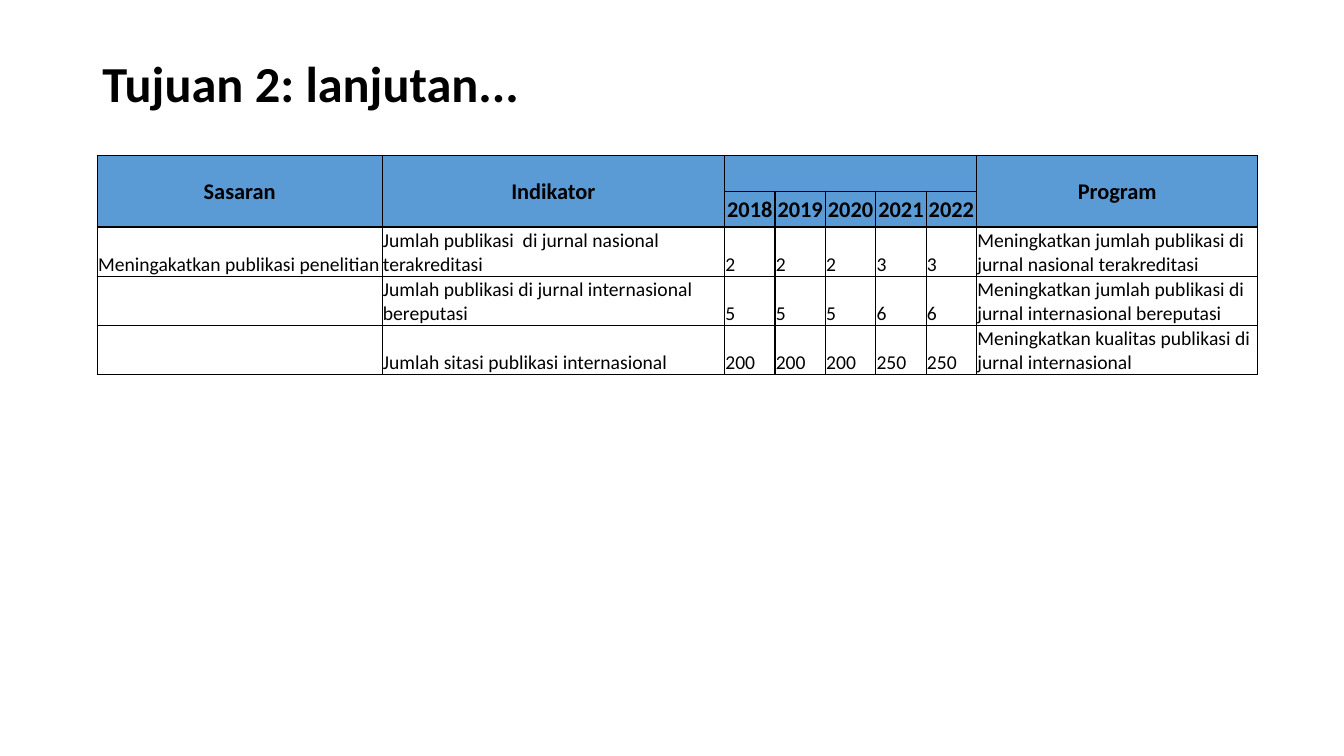
import pptx
import pptx.dml.color
import pptx.enum.text
import pptx.oxml
import pptx.oxml.ns
import pptx.util

Cm = pptx.util.Cm
Pt = pptx.util.Pt
Anchor = pptx.enum.text.MSO_ANCHOR
Align = pptx.enum.text.PP_ALIGN


def color(hex_value):
    return pptx.dml.color.RGBColor.from_string(hex_value)


class SlideBuilder:
    font = "Calibri"
    ink = "000000"
    header_fill = "5B9BD5"
    inset = Cm(0.02)

    def __init__(self, slide):
        self.slide = slide

    def set_text(self, frame, text, size, bold, align=Align.LEFT):
        frame.text = text
        paragraph = frame.paragraphs[0]
        paragraph.alignment = align
        for run in paragraph.runs:
            run.font.name = self.font
            run.font.size = Pt(size)
            run.font.bold = bold
            run.font.color.rgb = color(self.ink)

    def title(self, text, left, top, width, height):
        frame = self.slide.shapes.add_textbox(left, top, width, height).text_frame
        frame.word_wrap = True
        frame.vertical_anchor = Anchor.MIDDLE
        self.set_text(frame, text, 36, True)
        frame.paragraphs[0].line_spacing = 0.9

    def borders(self, cell):
        properties = cell._tc.get_or_add_tcPr()
        for side in ("lnL", "lnR", "lnT", "lnB"):
            properties.append(pptx.oxml.parse_xml(
                f'<a:{side} {pptx.oxml.ns.nsdecls("a")} w="12700"><a:solidFill>'
                f'<a:srgbClr val="{self.ink}"/></a:solidFill></a:{side}>'))

    def cell(self, cell, text, is_header):
        cell.margin_left = cell.margin_right = cell.margin_top = self.inset
        cell.margin_bottom = 0
        self.borders(cell)
        if is_header:
            cell.fill.solid()
            cell.fill.fore_color.rgb = color(self.header_fill)
            cell.vertical_anchor = Anchor.MIDDLE
            self.set_text(cell.text_frame, text, 16, True, Align.CENTER)
        else:
            cell.fill.background()
            cell.vertical_anchor = Anchor.BOTTOM
            self.set_text(cell.text_frame, text, 14, False)

    def table(self, rows, header_count, widths, heights, merges, left, top):
        table = self.slide.shapes.add_table(
            len(rows), len(widths), left, top, sum(widths), sum(heights)).table
        table.horz_banding = False
        for column, width in zip(table.columns, widths):
            column.width = width
        for row, height in zip(table.rows, heights):
            row.height = height
        for r, texts in enumerate(rows):
            for c, text in enumerate(texts):
                self.cell(table.cell(r, c), text, r < header_count)
        for first, last in merges:
            table.cell(*first).merge(table.cell(*last))


def main():
    deck = pptx.Presentation()
    deck.slide_width, deck.slide_height = Cm(33.87), Cm(19.05)
    builder = SlideBuilder(deck.slides.add_slide(deck.slide_layouts[6]))

    # Heading
    builder.title("Tujuan 2: lanjutan...", Cm(2.33), Cm(1.01), Cm(29.21), Cm(2.34))

    # Targets per year, under a two-row header
    years = [str(year) for year in range(2018, 2023)]
    blank_years = [""] * len(years)
    rows = [
        ["Sasaran", "Indikator", *blank_years, "Program"],
        ["", "", *years, ""],
        ["Meningakatkan publikasi penelitian",
         "Jumlah publikasi  di jurnal nasional terakreditasi",
         "2", "2", "2", "3", "3",
         "Meningkatkan jumlah publikasi di jurnal nasional terakreditasi"],
        ["", "Jumlah publikasi di jurnal internasional bereputasi",
         "5", "5", "5", "6", "6",
         "Meningkatkan jumlah publikasi di jurnal internasional bereputasi"],
        ["", "Jumlah sitasi publikasi internasional",
         "200", "200", "200", "250", "250",
         "Meningkatkan kualitas publikasi di jurnal internasional"],
    ]
    widths = [Cm(7.18), Cm(8.63), *[Cm(1.27)] * len(years), Cm(7.09)]
    heights = [Cm(0.9)] * 2 + [Cm(1.24)] * 3
    program = len(widths) - 1
    merges = [((0, c), (1, c)) for c in (0, 1, program)]
    merges.append(((0, 2), (0, program - 1)))
    builder.table(rows, 2, widths, heights, merges, Cm(2.45), Cm(3.92))

    deck.save("out.pptx")


if __name__ == "__main__":
    main()
